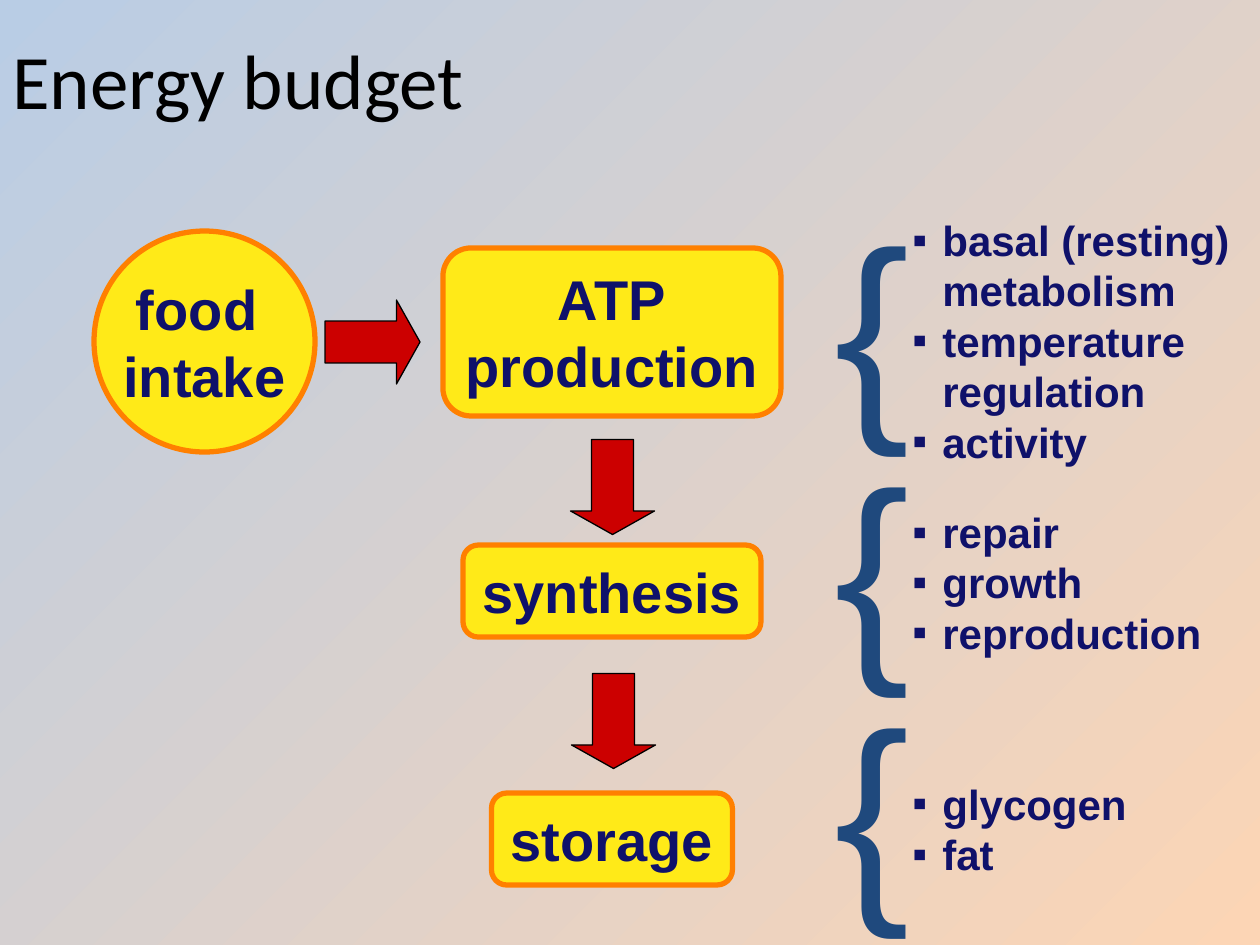
from lxml import etree
from pptx import Presentation
from pptx import util as u
from pptx.dml.color import RGBColor
from pptx.enum import shapes, text
from pptx.oxml.ns import qn

NAVY, BLUE, YELLOW, ORANGE, RED = "0F116A", "1F497D", "FFEA18", "FF8000", "CC0000"
LABEL = dict(size=32, bold=True, color=NAVY, align="CENTER", wrap=False)
BULLETS = dict(size=24, bold=True, color=NAVY, bullet="▪", wrap=False)
BRACE = dict(size=129, color=BLUE, align="CENTER", wrap=False)
FLOW_X = 612  # centre line of the three stages


def px(n):
    return u.Emu(round(n * 914400 / 126))


def rgb(code):
    return RGBColor.from_string(code)


def add_bullet(p, char):
    pPr = p._p.get_or_add_pPr()
    pPr.set("marL", str(px(30)))
    pPr.set("indent", str(px(-30)))
    etree.SubElement(pPr, qn("a:buFont")).set("typeface", "Arial")
    etree.SubElement(pPr, qn("a:buChar")).set("char", char)


def write(sp, lines, size, color, font="Arial", bold=False, align="LEFT",
          bullet=None, wrap=True):
    """Fill a shape with one paragraph per item; a newline is a line break."""
    tf = sp.text_frame
    tf.word_wrap = wrap
    tf.vertical_anchor = text.MSO_ANCHOR.MIDDLE
    for i, line in enumerate(lines):
        p = tf.add_paragraph() if i else tf.paragraphs[0]
        p.text = line
        p.alignment = text.PP_ALIGN[align]
        if bullet:
            add_bullet(p, bullet)
        for r in p.runs:
            r.font.name = font
            r.font.size = u.Pt(size)
            r.font.bold = bold
            r.font.color.rgb = rgb(color)


def add_text(s, box, lines, **fmt):
    write(s.shapes.add_textbox(*map(px, box)), lines, **fmt)


def add_shape(s, kind, box, fill, line, width):
    sp = s.shapes.add_shape(shapes.MSO_SHAPE[kind], *map(px, box))
    sp.shadow.inherit = False
    sp.fill.solid()
    sp.fill.fore_color.rgb = rgb(fill)
    sp.line.color.rgb = rgb(line)
    sp.line.width = u.Pt(width)
    return sp


def add_node(s, kind, box, label):
    write(add_shape(s, kind, box, YELLOW, ORANGE, 3), [label], **LABEL)


def add_arrow(s, x, y, rotation=0):
    sp = add_shape(s, "RIGHT_ARROW", (x, y, 95, 84), RED, "000000", 0.75)
    sp.adjustments[0], sp.adjustments[1] = 0.5, 0.28
    sp.rotation = rotation


def add_stage(s, box, label, brace_y, uses_box, uses):
    """Place a stage of the budget, its brace and the list of its uses."""
    y, w, h = box
    add_node(s, "ROUNDED_RECTANGLE", (FLOW_X - w / 2, y, w, h), label)
    add_text(s, (822, brace_y, 101, 283), ["{"], **BRACE)
    add_text(s, (900, *uses_box), uses, **BULLETS)


def set_background(s):
    """Shade the slide from peach at bottom right to blue at top left."""
    fill = s.background.fill
    fill.gradient()
    for stop, (pos, code) in zip(fill.gradient_stops, [(0, "FCD5B5"), (1, "B9CDE5")]):
        stop.position = pos
        stop.color.rgb = rgb(code)
    grad = s._element.find(".//" + qn("a:gradFill"))
    grad.remove(grad.find(qn("a:lin")))
    focus = etree.SubElement(grad, qn("a:path"), path="circle")
    etree.SubElement(focus, qn("a:fillToRect"), l="100000", t="100000")
    etree.SubElement(grad, qn("a:tileRect"), r="-100000", b="-100000")


def main():
    prs = Presentation()
    prs.slide_width, prs.slide_height = px(1260), px(945)
    s = prs.slides.add_slide(prs.slide_layouts[6])
    set_background(s)
    add_text(s, (0, 0, 1134, 158), ["Energy budget"], size=44,
             color="000000", font="Calibri")

    add_node(s, "OVAL", (94, 231, 221, 221), "food \nintake")
    add_arrow(s, 325, 300)
    add_stage(s, (248, 338, 168), "ATP\nproduction", 179, (208, 355, 265),
              ["basal (resting) \nmetabolism", "temperature \nregulation", "activity"])
    add_arrow(s, 565, 445, 90)
    add_stage(s, (545, 298, 92), "synthesis", 420, (500, 315, 164),
              ["repair", "growth", "reproduction"])
    add_arrow(s, 566, 679, 90)
    add_stage(s, (793, 241, 92), "storage", 661, (772, 241, 113),
              ["glycogen", "fat"])
    prs.save("out.pptx")


if __name__ == "__main__":
    main()
